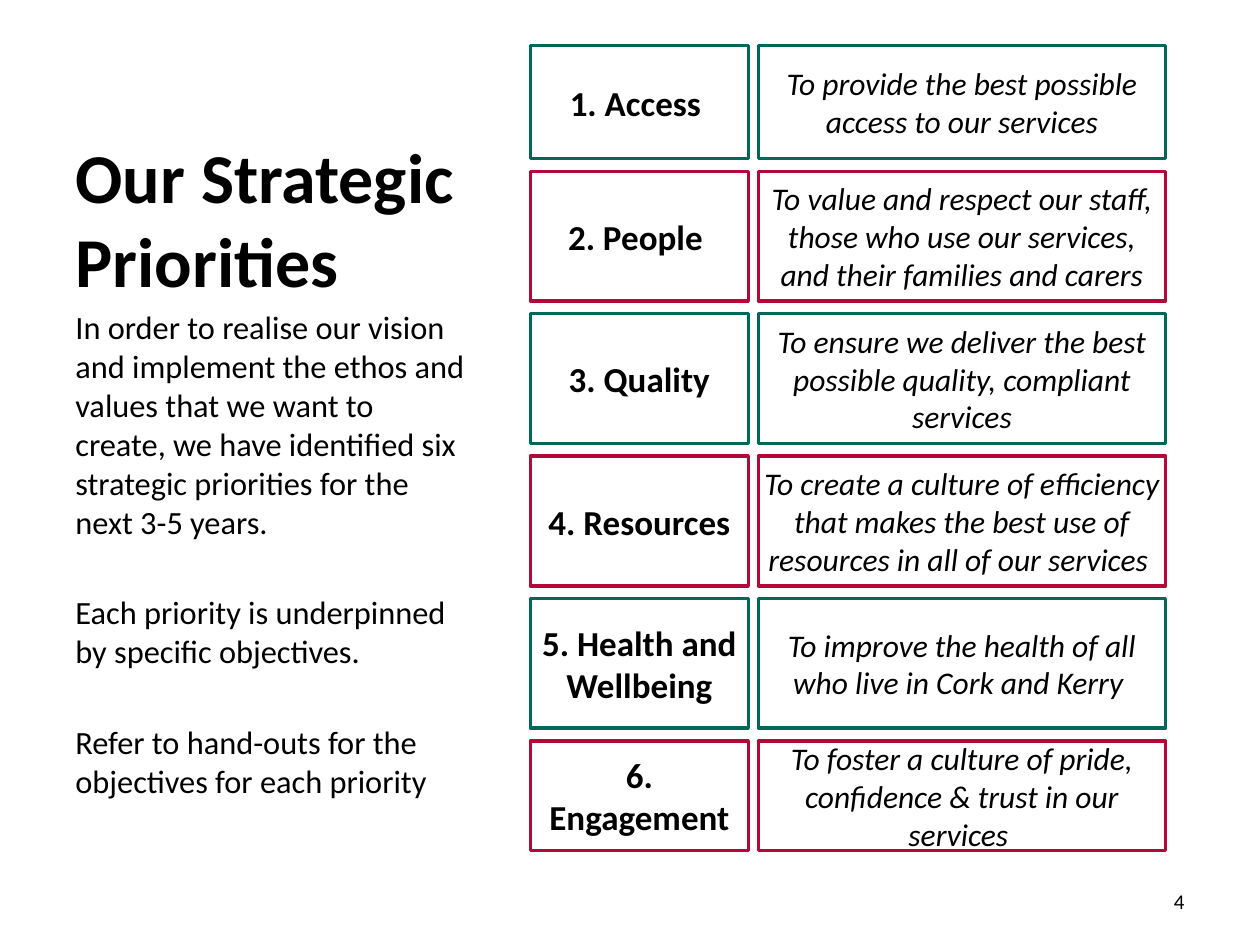
from pptx import Presentation
from pptx import util as u
from pptx.dml.color import RGBColor
from pptx.enum import shapes, text

PX = u.Inches(1) // 100

THEME = {
    "font": "Calibri",
    "ink": RGBColor.from_string("000000"),
    "paper": RGBColor.from_string("FFFFFF"),
    "borders": [RGBColor.from_string("006858"), RGBColor.from_string("B30838")],
    "title": u.Pt(40),
    "body": u.Pt(18.5),
    "name": u.Pt(20),
    "aim": u.Pt(18),
    "number": u.Pt(12),
    "border_width": u.Pt(2),
    "paragraph_gap": u.Pt(29.6),
}

INTRODUCTION = [
    "In order to realise our vision and implement the ethos and values that we want to create, "
    "we have identified six strategic priorities for the next 3-5 years.",
    "Each priority is underpinned by specific objectives.",
    "Refer to hand-outs for the objectives for each priority",
]

PRIORITIES = [
    (90, "1. Access ", "To provide the best possible access to our services"),
    (103, "2. People ", "To value and respect our staff, those who use our services, and their families and carers"),
    (103, "3. Quality", "To ensure we deliver the best possible quality, compliant services"),
    (103, "4. Resources", "To create a culture of efficiency that makes the best use of resources in all of our services "),
    (103, "5. Health and Wellbeing", "To improve the health of all who live in Cork and Kerry "),
    (87, "6. Engagement", "To foster a culture of pride, confidence & trust in our services "),
]


def place(*lengths):
    return [length * PX for length in lengths]


def write(shape, paragraphs, size, alignment, anchor, **font_values):
    frame = shape.text_frame
    frame.text = "\n".join(paragraphs)
    frame.word_wrap = True
    frame.auto_size = text.MSO_AUTO_SIZE.NONE
    frame.vertical_anchor = anchor
    values = {"name": THEME["font"], "size": THEME[size], **font_values}
    for index, paragraph in enumerate(frame.paragraphs):
        paragraph.alignment = alignment
        paragraph.space_before = THEME["paragraph_gap"] if index else u.Pt(0)
        for attribute, value in values.items():
            setattr(paragraph.font, attribute, value)
        paragraph.font.color.rgb = THEME["ink"]


presentation = Presentation()
presentation.slide_width, presentation.slide_height = place(1000, 750)
slide = presentation.slides.add_slide(presentation.slide_layouts[5])

title = slide.shapes.title
title.left, title.top, title.width, title.height = place(50, 117, 329, 127)
write(title, ["Our Strategic Priorities"], "title",
      text.PP_ALIGN.LEFT, text.MSO_ANCHOR.BOTTOM, bold=True)

introduction = slide.shapes.add_textbox(*place(50, 239, 329, 407))
write(introduction, INTRODUCTION, "body", text.PP_ALIGN.LEFT, text.MSO_ANCHOR.TOP)

page_number = slide.shapes.add_textbox(*place(717, 695, 233, 40))
write(page_number, ["4"], "number", text.PP_ALIGN.RIGHT, text.MSO_ANCHOR.MIDDLE)

row_gap = 10
top = 36
for index, (height, name, aim) in enumerate(PRIORITIES):
    columns = [
        (421, 173, name, "name", {"bold": True}),
        (602, 323, aim, "aim", {"italic": True}),
    ]
    for left, width, wording, size, style in columns:
        box = slide.shapes.add_shape(
            shapes.MSO_SHAPE.RECTANGLE, *place(left, top, width, height))
        box.shadow.inherit = False
        box.fill.solid()
        box.fill.fore_color.rgb = THEME["paper"]
        box.line.color.rgb = THEME["borders"][index % 2]
        box.line.width = THEME["border_width"]
        for side in ("left", "top", "right", "bottom"):
            setattr(box.text_frame, f"margin_{side}", 4 * PX)
        write(box, [wording], size, text.PP_ALIGN.CENTER, text.MSO_ANCHOR.MIDDLE, **style)
    top += height + row_gap

presentation.save("out.pptx")
